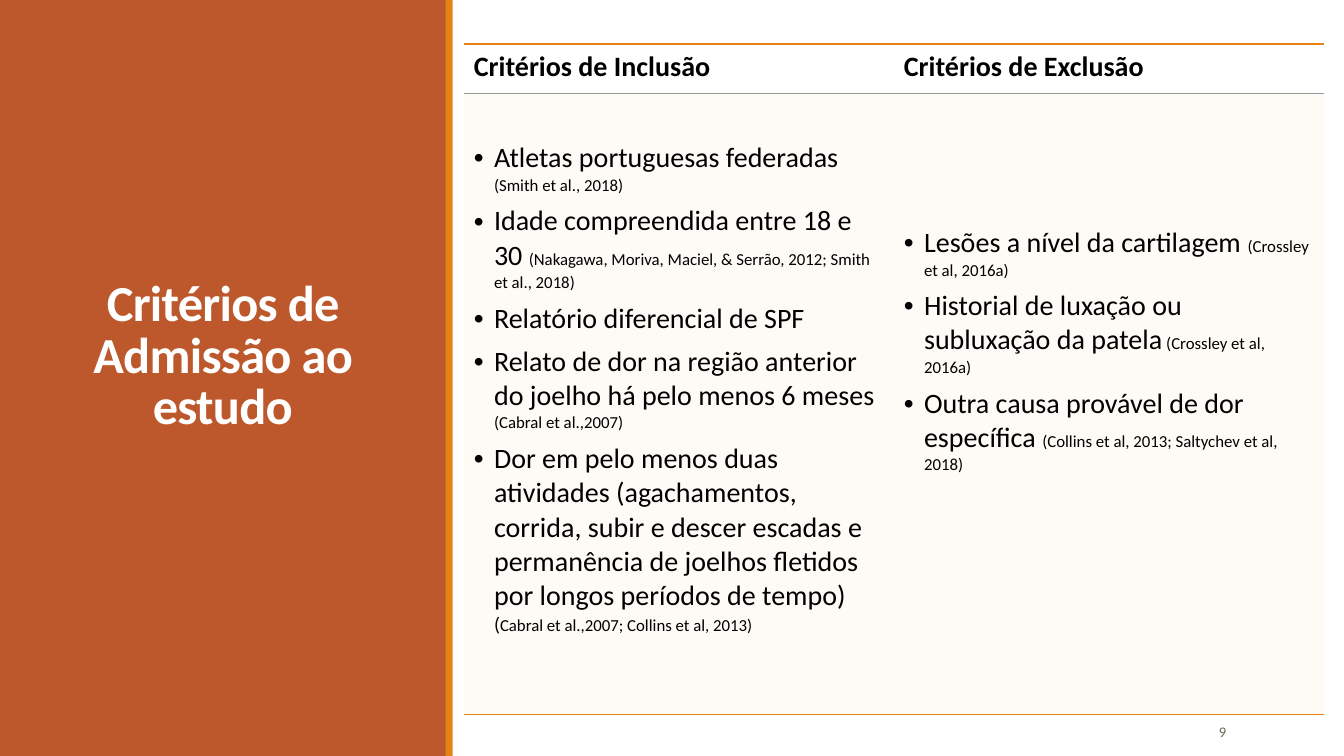
from lxml.etree import SubElement
from pptx import Presentation
from pptx.dml.color import RGBColor
from pptx.enum.shapes import MSO_SHAPE
from pptx.enum.text import MSO_ANCHOR, MSO_AUTO_SIZE, PP_ALIGN
from pptx.oxml import parse_xml
from pptx.oxml.ns import nsdecls, qn
from pptx.util import Inches, Pt

RUST = RGBColor(0xBD, 0x58, 0x2C)
ORANGE = RGBColor(0xE4, 0x83, 0x12)
CREAM = RGBColor(0xFB, 0xE6, 0xCE)
OLIVE = RGBColor(0x63, 0x70, 0x52)
GRAY = RGBColor(0x99, 0x99, 0x99)
BLACK = RGBColor(0, 0, 0)
WHITE = RGBColor(0xFF, 0xFF, 0xFF)
NO_STYLE = "{2D5ABB26-0587-4C30-8999-92F81FD0307C}"

HEADERS = ["Critérios de Inclusão", "Critérios de Exclusão"]
# Each criterion is a list of (text, size) runs.
INCLUSION = [
    [("Atletas portuguesas federadas ", 20), ("(Smith et al., 2018)", 12)],
    [("Idade compreendida entre 18 e 30 ", 20),
     ("(Nakagawa, Moriva, Maciel, & Serrão, 2012; Smith et al., 2018)", 12)],
    [("Relatório diferencial de SPF", 20)],
    [("Relato de dor na região anterior do joelho há pelo menos 6 meses ", 20),
     ("(Cabral et al.,2007)", 12)],
    [("Dor em pelo menos duas atividades (agachamentos, corrida, subir e descer "
      "escadas e permanência de joelhos fletidos por longos períodos de tempo) ", 20),
     ("(", 14), ("Cabral et al.,2007; Collins et al, 2013)", 12)],
]
EXCLUSION = [
    [("Lesões a nível da cartilagem ", 20), ("(Crossley et al, 2016a)", 12)],
    [("Historial de luxação ou subluxação da patela", 20),
     (" (Crossley et al, 2016a)", 12)],
    [("Outra causa provável de dor específica ", 20),
     ("(Collins et al, 2013; Saltychev et al, 2018)", 12)],
]


def add_run(p, text, size=20, color=BLACK, bold=False):
    r = p.add_run()
    r.text = text
    r.font.name = "Calibri"
    r.font.size = Pt(size)
    r.font.color.rgb = color
    r.font.bold = bold
    return r


def add_bar(s, x, y, w, h, color):
    sp = s.shapes.add_shape(MSO_SHAPE.RECTANGLE, Inches(x), Inches(y), Inches(w), Inches(h))
    sp.shadow.inherit = False
    sp.fill.solid()
    sp.fill.fore_color.rgb = color
    sp.line.fill.background()


def add_title_panel(s, x, y, w, h):
    add_bar(s, x, y, w, h, RUST)
    add_bar(s, x + w - 0.01, y, 0.07, h, ORANGE)
    title = s.shapes.title
    s.shapes._spTree.append(title._element)  # bring in front of the panel
    title.left, title.top = Inches(x + 0.46), Inches(y + 2.3)
    title.width, title.height = Inches(3.5), Inches(2.5)
    tf = title.text_frame
    tf.auto_size = MSO_AUTO_SIZE.NONE
    tf.word_wrap = True
    tf.vertical_anchor = MSO_ANCHOR.MIDDLE
    p = tf.paragraphs[0]
    p.alignment = PP_ALIGN.CENTER
    p.line_spacing = 0.85
    r = add_run(p, "Critérios de Admissão ao estudo", 36, WHITE, bold=True)
    r.font._element.set("spc", "-50")


def set_border(cell, side, color, width):
    ln = parse_xml(
        f'<a:{side} {nsdecls("a")} w="{Pt(width)}"><a:solidFill>'
        f'<a:srgbClr val="{color}"/></a:solidFill></a:{side}>')
    tc_pr = cell._tc.get_or_add_tcPr()
    tc_pr.insert(len(tc_pr.findall(qn("a:lnT"))), ln)


def space_paragraph(p):
    p.space_before = p.space_after = Pt(3)


def fill_header(cell, text):
    cell.fill.background()
    set_border(cell, "lnT", ORANGE, 1.5)
    set_border(cell, "lnB", GRAY, 0.5)
    p = cell.text_frame.paragraphs[0]
    space_paragraph(p)
    add_run(p, text, bold=True)


def fill_criteria(cell, criteria, top):
    cell.fill.solid()
    cell.fill.fore_color.rgb = CREAM
    tint = cell._tc.tcPr.find(".//" + qn("a:srgbClr"))
    SubElement(tint, qn("a:alpha")).set("val", "20000")
    set_border(cell, "lnT", GRAY, 0.5)
    set_border(cell, "lnB", ORANGE, 1)
    cell.margin_top = Inches(top)
    tf = cell.text_frame
    for i, runs in enumerate(criteria):
        p = tf.add_paragraph() if i else tf.paragraphs[0]
        space_paragraph(p)
        p_pr = p._p.get_or_add_pPr()
        p_pr.set("marL", str(Inches(0.2)))
        p_pr.set("indent", str(Inches(-0.2)))
        SubElement(p_pr, qn("a:buFont")).set("typeface", "Arial")
        SubElement(p_pr, qn("a:buChar")).set("char", "•")
        for text, size in runs:
            add_run(p, text, size)


def add_criteria_table(s, x, y, w, h, header_h=0.49):
    frame = s.shapes.add_table(2, 2, Inches(x), Inches(y), Inches(w), Inches(h))
    table = frame.table
    table._tbl.tblPr.find(qn("a:tableStyleId")).text = NO_STYLE
    table.horz_banding = False
    table.rows[0].height = Inches(header_h)
    table.rows[1].height = Inches(h - header_h)
    columns = zip(HEADERS, [INCLUSION, EXCLUSION], [0.47, 1.31])
    for i, (header, criteria, top) in enumerate(columns):
        table.columns[i].width = Inches(w / 2)
        fill_header(table.cell(0, i), header)
        fill_criteria(table.cell(1, i), criteria, top)


def add_page_number(s, x, y, w, h):
    tf = s.shapes.add_textbox(Inches(x), Inches(y), Inches(w), Inches(h)).text_frame
    tf.word_wrap = True
    tf.vertical_anchor = MSO_ANCHOR.MIDDLE
    p = tf.paragraphs[0]
    p.alignment = PP_ALIGN.RIGHT
    add_run(p, "9", 10.5, OLIVE)


def main():
    prs = Presentation()
    prs.slide_width, prs.slide_height = Inches(13.33), Inches(7.5)
    s = prs.slides.add_slide(prs.slide_layouts[5])
    add_title_panel(s, 0, 0, 4.43, 7.5)
    add_page_number(s, 10.83, 7.06, 1.43, 0.4)
    add_criteria_table(s, 4.6, 0.44, 8.53, 6.65)
    prs.save("out.pptx")


if __name__ == "__main__":
    main()
